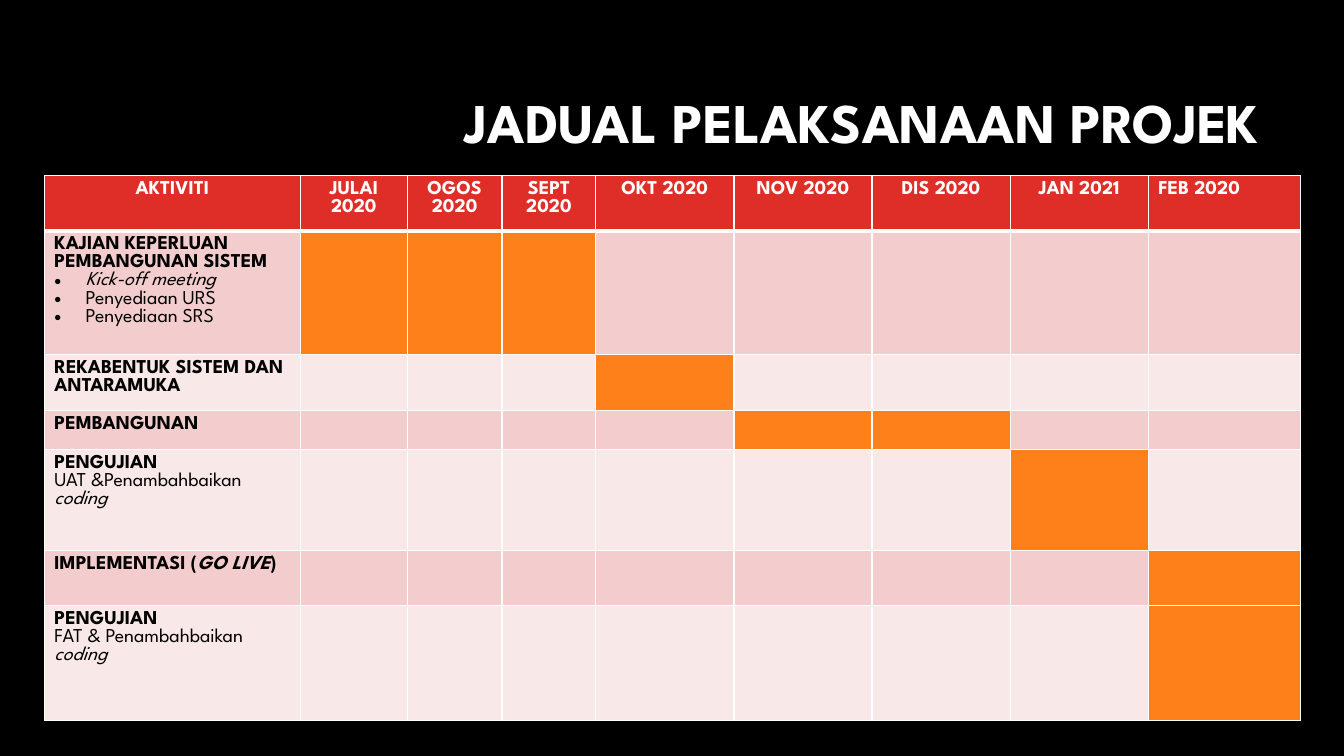
from dataclasses import dataclass

from lxml import etree
from pptx import Presentation
from pptx.dml.color import RGBColor
from pptx.enum.text import MSO_ANCHOR, MSO_AUTO_SIZE, PP_ALIGN
from pptx.oxml.ns import qn
from pptx.util import Inches, Pt

LEFT, CENTER, RIGHT = PP_ALIGN.LEFT, PP_ALIGN.CENTER, PP_ALIGN.RIGHT
MIDDLE = MSO_ANCHOR.MIDDLE
NO_AUTOFIT = MSO_AUTO_SIZE.NONE
TITLE_ONLY = 5


@dataclass(frozen=True)
class Theme:
    """Colours, font and type sizes of the slide."""
    font: str = "League Spartan"
    title_size: int = 40
    table_size: int = 14
    black: str = "000000"
    white: str = "FFFFFF"
    header: str = "DF2E28"
    bar: str = "FE801A"
    bands: tuple = ("F3CDCD", "F9E8E8")


THEME = Theme()

COLUMN_WIDTHS = [2.54, 1.06, 0.94, 0.93, 1.37, 1.37, 1.37, 1.37, 1.51]
ROW_HEIGHTS = [0.55, 1.23, 0.55, 0.39, 1, 0.55, 1.14]
HEADINGS = ["AKTIVITI", "JULAI 2020", "OGOS 2020", "SEPT 2020", "OKT 2020",
            "NOV 2020", "DIS 2020", "JAN 2021", "FEB 2020"]

# Each activity: heading runs, detail lines, bulleted, first and last month; "*" opens an italic run.
ACTIVITIES = [
    (["KAJIAN KEPERLUAN PEMBANGUNAN SISTEM"],
     [["*Kick-off meeting"], ["Penyediaan URS"], ["Penyediaan SRS"]], True, 1, 3),
    (["REKABENTUK SISTEM DAN ANTARAMUKA"], [], False, 4, 4),
    (["PEMBANGUNAN"], [], False, 5, 6),
    (["PENGUJIAN"], [["UAT &Penambahbaikan ", "*coding"]], False, 7, 7),
    (["IMPLEMENTASI (", "*GO LIVE", ")"], [], False, 8, 8),
    (["PENGUJIAN"], [["FAT & Penambahbaikan ", "*coding"]], False, 8, 8),
]


def style_paragraph(paragraph, size, color, bold=False, alignment=LEFT):
    """Set the font and alignment of a paragraph."""
    paragraph.alignment = alignment
    paragraph.font.name = THEME.font
    paragraph.font.size = Pt(size)
    paragraph.font.bold = bold
    paragraph.font.color.rgb = RGBColor.from_string(color)


def add_bullet(paragraph):
    """Give a paragraph a hanging round bullet."""
    properties = paragraph._p.get_or_add_pPr()
    properties.set("marL", str(Inches(0.31)))
    properties.set("indent", str(-Inches(0.31)))
    etree.SubElement(properties, qn("a:buFont"), typeface="Arial")
    etree.SubElement(properties, qn("a:buChar"), char="•")


def format_cell(cell, color, top=1, bottom=1):
    """Fill a cell and draw its white borders."""
    properties = cell._tc.get_or_add_tcPr()
    for side, width in (("L", 1), ("R", 1), ("T", top), ("B", bottom)):
        line = etree.SubElement(properties, qn(f"a:ln{side}"), w=str(Pt(width)))
        fill = etree.SubElement(line, qn("a:solidFill"))
        etree.SubElement(fill, qn("a:srgbClr"), val=THEME.white)
    cell.fill.solid()
    cell.fill.fore_color.rgb = RGBColor.from_string(color)


def write_activity(cell, heading, details, bulleted):
    """Write a bold activity heading and its detail lines into a cell."""
    for index, parts in enumerate([heading] + details):
        paragraph = cell.text_frame.paragraphs[0] if index == 0 else cell.text_frame.add_paragraph()
        if bulleted and index > 0:
            add_bullet(paragraph)
        style_paragraph(paragraph, THEME.table_size, THEME.black, bold=index == 0)
        for part in parts:
            run = paragraph.add_run()
            run.text = part.lstrip("*")
            if part.startswith("*"):
                run.font.italic = True


def add_title(slide, left, top, width, height):
    """Place the slide title, raised above the middle of its box."""
    title = slide.shapes.title
    title.left, title.top = Inches(left), Inches(top)
    title.width, title.height = Inches(width), Inches(height)
    frame = title.text_frame
    frame.text = "JADUAL PELAKSANAAN PROJEK"
    frame.word_wrap = True
    frame.auto_size = NO_AUTOFIT
    frame.vertical_anchor = MIDDLE
    frame.margin_bottom = Inches(0.65)
    paragraph = frame.paragraphs[0]
    paragraph.line_spacing = 0.9
    style_paragraph(paragraph, THEME.title_size, THEME.white, bold=True, alignment=RIGHT)


def add_schedule(slide, left, top, width, height):
    """Draw the schedule table with a coloured bar for each activity."""
    table = slide.shapes.add_table(len(ROW_HEIGHTS), len(COLUMN_WIDTHS), Inches(left),
                                   Inches(top), Inches(width), Inches(height)).table
    for column, column_width in zip(table.columns, COLUMN_WIDTHS):
        column.width = Inches(column_width)
    for row, row_height in zip(table.rows, ROW_HEIGHTS):
        row.height = Inches(row_height)

    for column, heading in enumerate(HEADINGS):
        cell = table.cell(0, column)
        cell.text = heading
        format_cell(cell, THEME.header, bottom=3)
        alignment = LEFT if heading == HEADINGS[-1] else CENTER
        style_paragraph(cell.text_frame.paragraphs[0], THEME.table_size, THEME.white,
                        bold=True, alignment=alignment)

    for row, (heading, details, bulleted, first, last) in enumerate(ACTIVITIES, 1):
        band = THEME.bands[(row - 1) % 2]
        for column in range(len(HEADINGS)):
            cell = table.cell(row, column)
            format_cell(cell, THEME.bar if first <= column <= last else band,
                        top=3 if row == 1 else 1)
            if column > 0:
                style_paragraph(cell.text_frame.paragraphs[0], THEME.table_size, THEME.black)
        write_activity(table.cell(row, 0), heading, details, bulleted)


def main():
    """Build the schedule slide and save it."""
    presentation = Presentation()
    presentation.slide_width, presentation.slide_height = Inches(13.33), Inches(7.5)
    slide = presentation.slides.add_slide(presentation.slide_layouts[TITLE_ONLY])
    slide.background.fill.solid()
    slide.background.fill.fore_color.rgb = RGBColor.from_string(THEME.black)
    add_title(slide, 3.17, 0.84, 9.42, 1.41)
    add_schedule(slide, 0.44, 1.74, 12.46, 5.41)
    presentation.save("out.pptx")


if __name__ == "__main__":
    main()
